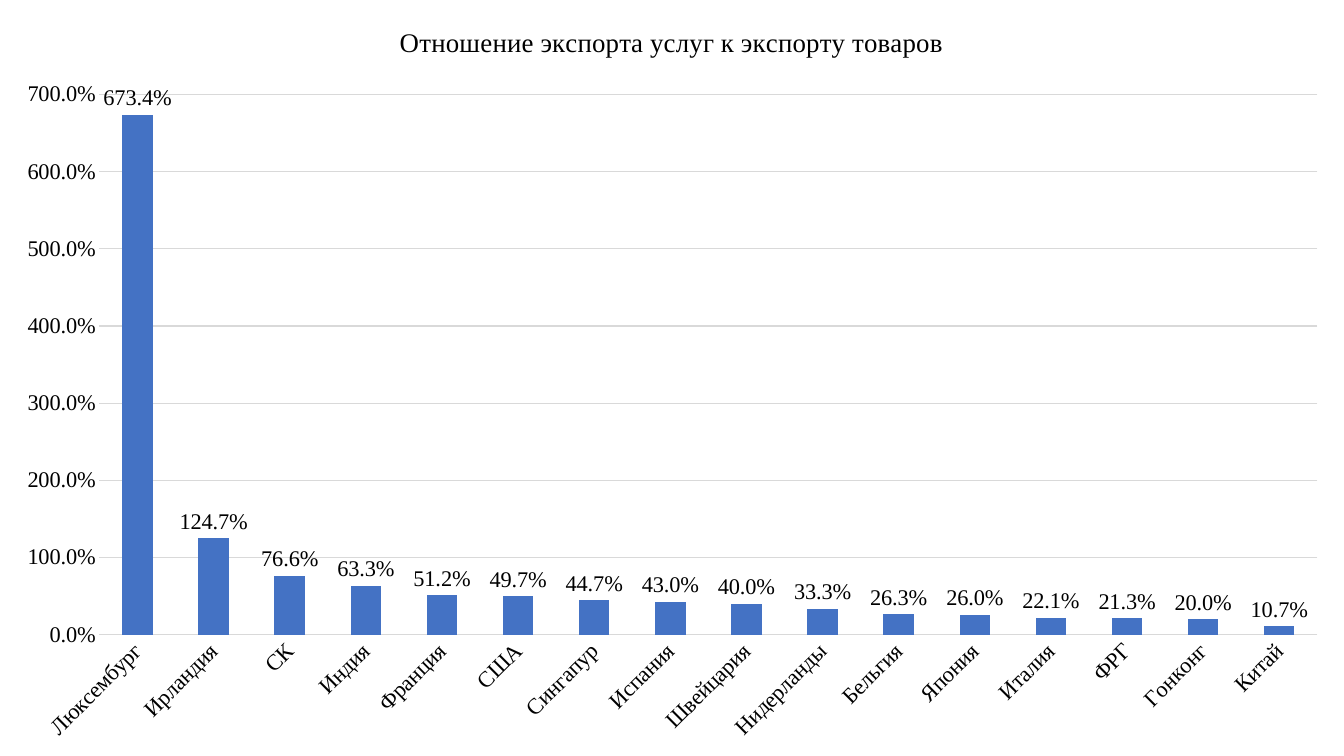
"""Build a slide with a column chart of service exports relative to goods exports."""
from lxml.etree import SubElement
from pptx import Presentation
from pptx.chart.data import CategoryChartData
from pptx.dml.color import RGBColor
from pptx.enum.chart import XL_CHART_TYPE as ChartType
from pptx.enum.chart import XL_LABEL_POSITION as LabelPosition
from pptx.enum.chart import XL_TICK_MARK as TickMark
from pptx.oxml.ns import qn
from pptx.util import Pt

TITLE = "Отношение экспорта услуг к экспорту товаров"
EXPORT_RATIOS = {
    "Люксембург": 6.734,
    "Ирландия": 1.247,
    "СК": 0.766,
    "Индия": 0.633,
    "Франция": 0.512,
    "США": 0.497,
    "Сингапур": 0.447,
    "Испания": 0.43,
    "Швейцария": 0.4,
    "Нидерланды": 0.333,
    "Бельгия": 0.263,
    "Япония": 0.26,
    "Италия": 0.221,
    "ФРГ": 0.213,
    "Гонконг": 0.2,
    "Китай": 0.107,
}
FONT = "Times New Roman"
PERCENT = "0.0%"
BLACK, BLUE, GREY = "000000", "4472C4", "D9D9D9"
WIDTH, HEIGHT = 960, 540
PLOT = {"x": 71, "y": 67.5, "w": 870, "h": 386}


def color(value):
    return RGBColor.from_string(value)


def format_font(font, size=16, fill=BLACK):
    font.name = FONT
    font.size = Pt(size)
    font.bold = False
    font.color.rgb = color(fill)


def write_text(frame, text, **font_format):
    run = frame.paragraphs[0].add_run()
    run.text = text
    format_font(run.font, **font_format)


def format_line(line):
    line.color.rgb = color(GREY)
    line.width = Pt(0.75)


def place_plot(chart):
    plot_area = chart._chartSpace.chart.plotArea
    layout = plot_area.find(qn("c:layout"))
    if layout is None:
        layout = SubElement(plot_area, qn("c:layout"))
        plot_area.insert(0, layout)
    manual = SubElement(layout, qn("c:manualLayout"))
    settings = {"layoutTarget": "inner", "xMode": "edge", "yMode": "edge"}
    for side, length in PLOT.items():
        settings[side] = f"{length / (WIDTH if side in 'xw' else HEIGHT):.4f}"
    for name, value in settings.items():
        SubElement(manual, qn(f"c:{name}")).set("val", value)


def format_axes(chart):
    countries, ratios = chart.category_axis, chart.value_axis
    for axis in (countries, ratios):
        axis.major_tick_mark = axis.minor_tick_mark = TickMark.NONE
        format_font(axis.tick_labels.font)
    format_line(countries.format.line)
    body = countries._element.find(qn("c:txPr")).find(qn("a:bodyPr"))
    body.set("rot", "-2700000")
    body.set("vert", "horz")
    ratios.minimum_scale, ratios.maximum_scale, ratios.major_unit = 0, 7, 1
    ratios.format.line.fill.background()
    ratios.tick_labels.number_format = PERCENT
    ratios.tick_labels.number_format_is_linked = False
    format_line(ratios.major_gridlines.format.line)


def format_columns(plot):
    plot.vary_by_categories = False
    plot.gap_width = 150
    fill = plot.series[0].format.fill
    fill.solid()
    fill.fore_color.rgb = color(BLUE)
    plot.has_data_labels = True
    labels = plot.data_labels
    labels.show_value = True
    labels.position = LabelPosition.OUTSIDE_END
    labels.number_format = PERCENT
    labels.number_format_is_linked = False
    format_font(labels.font)


def main():
    presentation = Presentation()
    presentation.slide_width, presentation.slide_height = Pt(WIDTH), Pt(HEIGHT)
    slide = presentation.slides.add_slide(presentation.slide_layouts[6])
    data = CategoryChartData(number_format=PERCENT)
    data.categories = list(EXPORT_RATIOS)
    data.add_series("Series 1", list(EXPORT_RATIOS.values()))
    chart = slide.shapes.add_chart(
        ChartType.COLUMN_CLUSTERED, 0, 0, Pt(WIDTH), Pt(HEIGHT), data
    ).chart
    format_font(chart.font)
    chart.has_legend = False
    write_text(chart.chart_title.text_frame, TITLE, size=19.2)
    chart.chart_title.include_in_layout = False
    place_plot(chart)
    format_axes(chart)
    format_columns(chart.plots[0])
    presentation.save("out.pptx")


if __name__ == "__main__":
    main()
